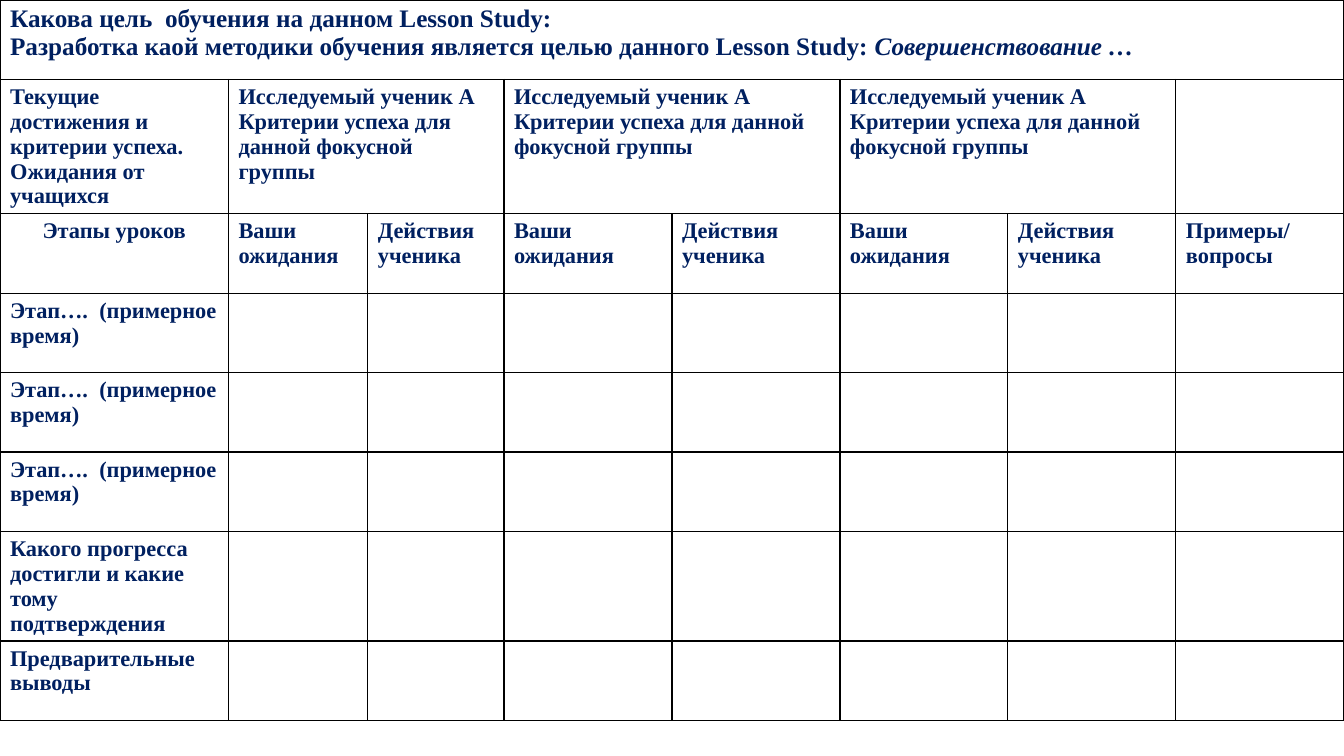
from lxml.etree import SubElement as Sub
from pptx import Presentation
from pptx.dml.color import RGBColor as Rgb
from pptx.enum.text import PP_ALIGN as Align
from pptx.oxml.ns import qn
from pptx.util import Inches, Pt

HUES = {"text": "002060", "line": "000000", "fill": "FFFFFF"}
FONT = "Times New Roman"

# Grid: columns in eighths of the slide's width, rows as a share of its height
COLS = [1.36, 0.83, 0.81] + [1] * 5
ROW = 0.105

GOAL = "Какова цель  обучения на данном Lesson Study:"
METHOD = "Разработка каой методики обучения является целью данного Lesson Study: "
AIM = "Совершенствование …"
PUPIL = ["Исследуемый ученик А", "Критерии успеха для данной фокусной группы"]
PAIR = ["Ваши ожидания", "Действия ученика"]
STAGE = "Этап….  (примерное время)"
SIDE = [
    "Текущие достижения и критерии успеха. Ожидания от учащихся",
    "Этапы уроков",
    STAGE,
    STAGE,
    STAGE,
    "Какого прогресса достигли и какие тому подтверждения",
    "Предварительные выводы",
]


def add_text(para, text, size=16, bold=True, italic=False, align=None):
    run = para.add_run()
    run.text = text
    font = run.font
    font.name, font.size = FONT, Pt(size)
    font.bold, font.italic = bold, italic
    font.color.rgb = Rgb.from_string(HUES["text"])
    if align is not None:
        para.alignment = align


def fill_cell(cell, lines, **form):
    frame = cell.text_frame
    for i, line in enumerate(lines):
        para = frame.add_paragraph() if i else frame.paragraphs[0]
        add_text(para, line, **form)


def style_cell(cell):
    cell.fill.solid()
    cell.fill.fore_color.rgb = Rgb.from_string(HUES["fill"])
    props = cell._tc.get_or_add_tcPr()
    # Borders come before the fill in the cell's properties
    for i, side in enumerate(("lnL", "lnR", "lnT", "lnB")):
        line = Sub(props, qn("a:" + side), w=str(Pt(1)))
        paint = Sub(line, qn("a:solidFill"))
        Sub(paint, qn("a:srgbClr"), val=HUES["line"])
        props.insert(i, line)


def add_grid(slide, wide, high):
    rows = len(SIDE) + 1
    frame = slide.shapes.add_table(
        rows, len(COLS), 0, 0, wide, int(high * ROW * rows))
    grid = frame.table
    for col, part in zip(grid.columns, COLS):
        col.width = int(wide * part / 8)
    for row in grid.rows:
        row.height = int(high * ROW)
    for cell in grid.iter_cells():
        style_cell(cell)
    return grid


def main():
    deck = Presentation()
    deck.slide_width, deck.slide_height = Inches(13.33), Inches(7.5)
    slide = deck.slides.add_slide(deck.slide_layouts[6])
    grid = add_grid(slide, deck.slide_width, deck.slide_height)

    # Title row
    head = grid.cell(0, 0)
    head.merge(grid.cell(0, len(COLS) - 1))
    fill_cell(head, [GOAL, METHOD], size=18)
    add_text(head.text_frame.paragraphs[1], AIM, size=18, italic=True)

    # Pupils, each over a pair of columns
    for col in (1, 3, 5):
        top = grid.cell(1, col)
        top.merge(grid.cell(1, col + 1))
        fill_cell(top, PUPIL)
        for i, label in enumerate(PAIR):
            fill_cell(grid.cell(2, col + i), [label])
    fill_cell(grid.cell(2, 7), ["Примеры/ вопросы"])

    # Labels down the first column
    for row, label in enumerate(SIDE, 1):
        align = Align.CENTER if row == 2 else None
        fill_cell(grid.cell(row, 0), [label], align=align)

    deck.save("out.pptx")


if __name__ == "__main__":
    main()
